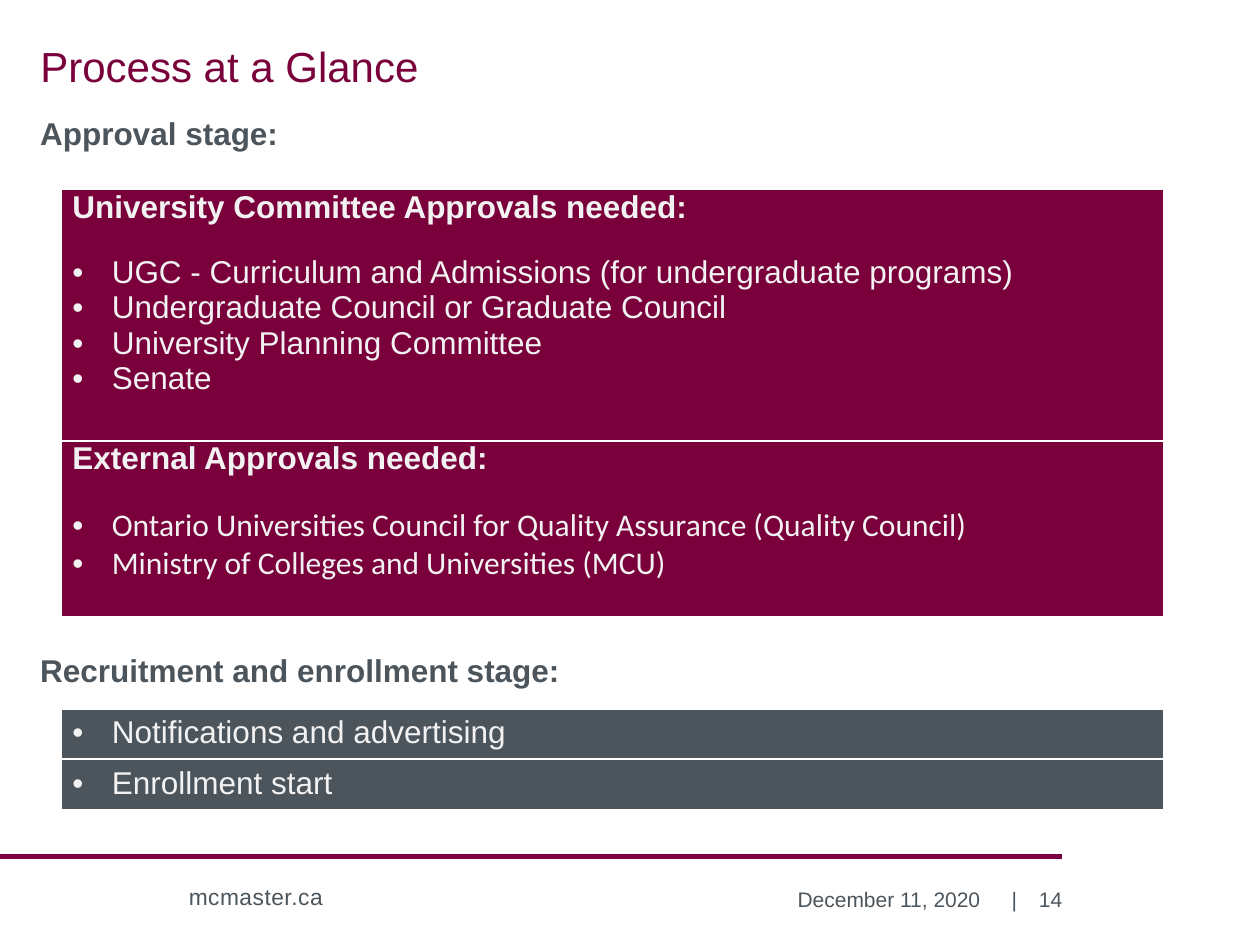
from lxml import etree
from pptx import Presentation, util as u
from pptx.dml.color import RGBColor
from pptx.enum import shapes, text
from pptx.oxml.ns import qn

Pt = u.Pt
MAROON = RGBColor(0x7A, 0x00, 0x3C)
TITLE_MAROON = RGBColor(0x79, 0x00, 0x3B)
RULE_MAROON = RGBColor(0x7C, 0x00, 0x40)
GREY = RGBColor(0x4C, 0x55, 0x5C)
PALE = RGBColor(0xF2, 0xF2, 0xF2)
LEFT, RIGHT = text.PP_ALIGN.LEFT, text.PP_ALIGN.RIGHT
TOP, MIDDLE = text.MSO_ANCHOR.TOP, text.MSO_ANCHOR.MIDDLE

TITLE = "Process at a Glance"
STAGES = [
    ("Approval stage:", (15.84, 61.92, 151.92, 28.8)),
    ("Recruitment and enrollment stage:", (15.84, 368.64, 314.64, 28.8)),
]
FOOTERS = [
    ("mcmaster.ca", (100.8, 501.12, 197.28, 23.04), 13, LEFT, TOP, 7.2),
    ("|", (570.24, 499.68, 18, 28.8), 12, RIGHT, MIDDLE, 7.2),
    ("14", (569.52, 499.68, 37.44, 28.8), 12, RIGHT, MIDDLE, 0),
    ("December 11, 2020", (413.28, 499.68, 154.08, 28.8), 12, RIGHT, MIDDLE, 7.2),
]
APPROVALS = [
    ("University Committee Approvals needed:", "Arial", [
        "UGC - Curriculum and Admissions (for undergraduate programs)",
        "Undergraduate Council or Graduate Council",
        "University Planning Committee",
        "Senate",
    ]),
    ("External Approvals needed:", "Calibri", [
        "Ontario Universities Council for Quality Assurance (Quality Council)",
        "Ministry of Colleges and Universities (MCU)",
    ]),
]
RECRUITMENT = [
    (None, "Arial", ["Notifications and advertising"]),
    (None, "Arial", ["Enrollment start"]),
]
TABLES = [
    (APPROVALS, 108.3, [143.6, 100.8], MAROON, 0),
    (RECRUITMENT, 405, [28.4, 28.4], GREY, 3.6),
]
TABLE_LEFT, TABLE_WIDTH = 34.8, 630.4
INDENT = 22.5


def write(para, words, size, color, bold=False, font="Arial"):
    span = para.add_run()
    span.text = words
    span.font.size = Pt(size)
    span.font.name = font
    span.font.bold = bold
    span.font.color.rgb = color
    return span


def add_label(page, words, area, size, align=LEFT, anchor=TOP,
              right_inset=7.2, bold=False, wrap=True):
    box = page.shapes.add_textbox(*map(Pt, area))
    frame = box.text_frame
    frame.word_wrap = wrap
    frame.vertical_anchor = anchor
    frame.margin_right = Pt(right_inset)
    para = frame.paragraphs[0]
    para.alignment = align
    return write(para, words, size, GREY, bold)


def add_bullet(para):
    props = para._p.get_or_add_pPr()
    props.set("marL", str(Pt(INDENT)))
    props.set("indent", str(-Pt(INDENT)))
    etree.SubElement(props, qn("a:buFont")).set("typeface", "Arial")
    etree.SubElement(props, qn("a:buChar")).set("char", "•")


def add_borders(cell):
    props = cell._tc.get_or_add_tcPr()
    for place, side in enumerate(("lnL", "lnR", "lnT", "lnB")):
        line = etree.Element(qn("a:" + side), w=str(Pt(1)))
        fill = etree.SubElement(line, qn("a:solidFill"))
        etree.SubElement(fill, qn("a:srgbClr")).set("val", "FFFFFF")
        props.insert(place, line)


def fill_cell(cell, heading, font, items, color, inset):
    cell.fill.solid()
    cell.fill.fore_color.rgb = color
    add_borders(cell)
    cell.margin_left = cell.margin_right = Pt(6.6)
    cell.margin_top = cell.margin_bottom = Pt(inset)
    frame = cell.text_frame
    para = frame.paragraphs[0]
    if heading:
        para.space_after = Pt(17.25)
        write(para, heading, 18, PALE, bold=True)
    for number, item in enumerate(items):
        if heading or number:
            para = frame.add_paragraph()
        add_bullet(para)
        write(para, item, 18, PALE, font=font)


def add_stage_table(page, rows, top, heights, color, inset):
    table = page.shapes.add_table(len(rows), 1, Pt(TABLE_LEFT), Pt(top),
                                  Pt(TABLE_WIDTH), Pt(sum(heights))).table
    table.first_row = table.horz_banding = False
    for number, (row, height) in enumerate(zip(rows, heights)):
        table.rows[number].height = Pt(height)
        fill_cell(table.cell(number, 0), *row, color, inset)


def set_title(page):
    title = page.shapes.title
    title.left, title.top, title.width, title.height = map(Pt, (15.84, 0, 691.2, 51.84))
    frame = title.text_frame
    frame.auto_size = text.MSO_AUTO_SIZE.NONE
    frame.vertical_anchor = text.MSO_ANCHOR.BOTTOM
    frame.margin_bottom = 0
    para = frame.paragraphs[0]
    para.alignment = LEFT
    para.line_spacing = 1.5
    write(para, TITLE, 24, TITLE_MAROON)


def main():
    deck = Presentation()
    deck.slide_width, deck.slide_height = Pt(720), Pt(540)
    page = deck.slides.add_slide(deck.slide_layouts[5])
    set_title(page)
    rule = page.shapes.add_connector(shapes.MSO_CONNECTOR.STRAIGHT,
                                     0, Pt(489.6), Pt(606.96), Pt(489.6))
    rule.line.color.rgb = RULE_MAROON
    rule.line.width = Pt(3)
    etree.SubElement(rule._element.spPr, qn("a:effectLst"))
    for words, area, size, align, anchor, inset in FOOTERS:
        span = add_label(page, words, area, size, align, anchor, inset)
        if words == "mcmaster.ca":
            span._r.get_or_add_rPr().set("spc", "30")
    for words, area in STAGES:
        add_label(page, words, area, 18, bold=True, wrap=False)
    for table in TABLES:
        add_stage_table(page, *table)
    deck.save("out.pptx")


if __name__ == "__main__":
    main()
